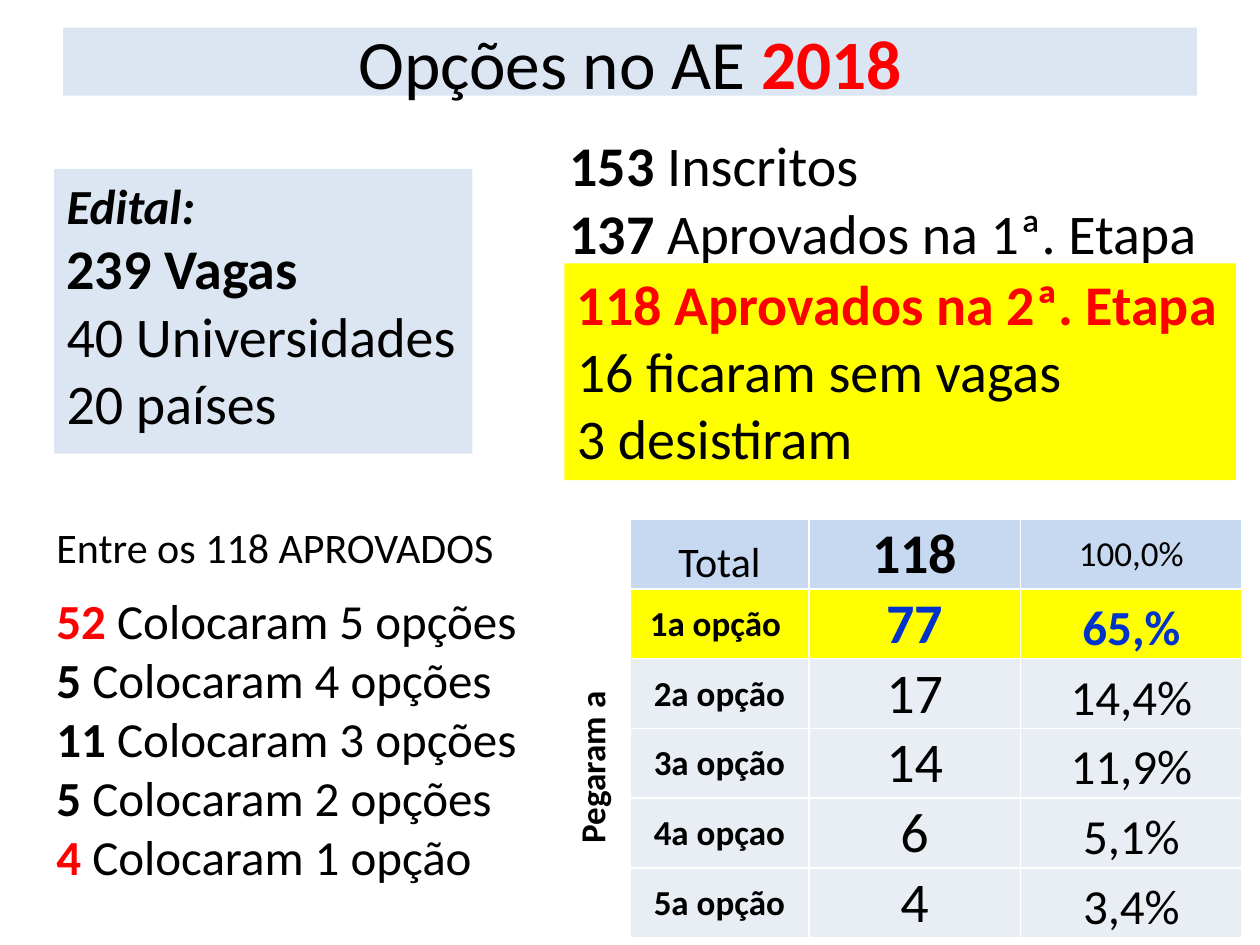
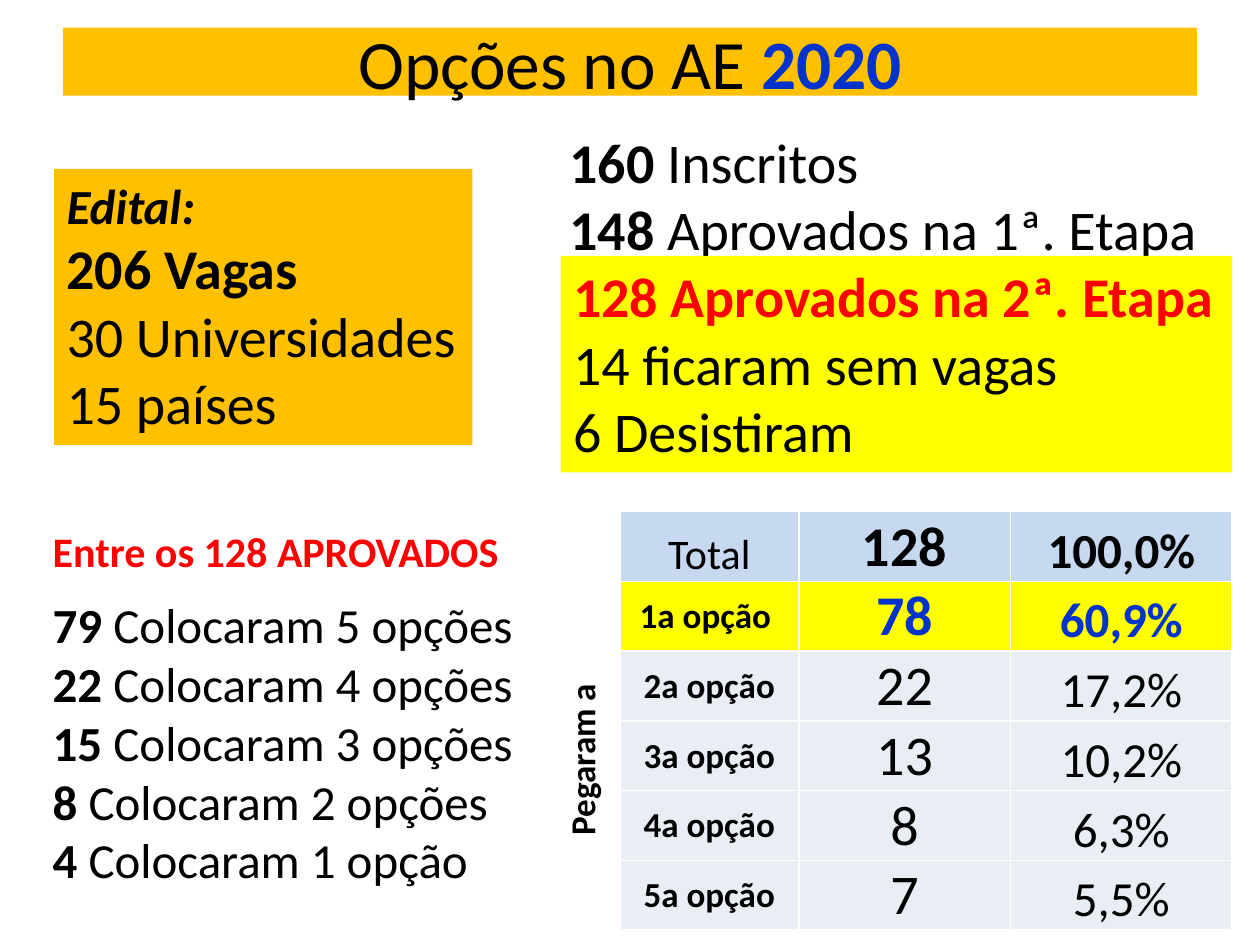
from dataclasses import dataclass

from lxml.etree import SubElement
from pptx import Presentation
from pptx.dml.color import RGBColor
from pptx.enum.text import MSO_ANCHOR, MSO_AUTO_SIZE, PP_ALIGN
from pptx.oxml.ns import qn
from pptx.util import Emu, Pt

FONT = "Calibri"
BLACK, WHITE, RED, BLUE = "000000", "FFFFFF", "FF0000", "0033CC"
YELLOW, PALE_BLUE, ORANGE = "FFFF00", "DCE6F2", "FFC000"
HEADER_BLUE, ROW_GREY = "C6D9F1", "E9EDF4"
COLUMN_WIDTHS = (47, 142, 168, 176)
ROW_HEIGHT = 54


@dataclass
class Span:
    text: str
    size: float = 32
    color: str = BLACK
    bold: bool = False
    italic: bool = False


def px(length):
    return Emu(length * 9144)


def rgb(color):
    return RGBColor.from_string(color)


def fill_with(target, color):
    if color:
        target.fill.solid()
        target.fill.fore_color.rgb = rgb(color)
    else:
        target.fill.background()


class Board:
    """Holds the deck style and the slide being built."""

    def __init__(self, deck):
        self.deck = deck
        self.page = None

    def add_lines(self, frame, lines, align=PP_ALIGN.LEFT):
        for index, spans in enumerate(lines):
            para = frame.paragraphs[0] if index == 0 else frame.add_paragraph()
            para.alignment = align
            for span in spans:
                run = para.add_run()
                run.text = span.text
                run.font.name = FONT
                run.font.size = Pt(span.size)
                run.font.bold = span.bold
                run.font.italic = span.italic
                run.font.color.rgb = rgb(span.color)

    def start_page(self, year, year_color, band_color):
        self.page = self.deck.slides.add_slide(self.deck.slide_layouts[5])
        title = self.page.shapes.title
        title.left, title.top, title.width, title.height = map(px, (50, 22, 900, 54))
        fill_with(title, band_color)
        frame = title.text_frame
        frame.auto_size = MSO_AUTO_SIZE.NONE
        frame.vertical_anchor = MSO_ANCHOR.MIDDLE
        spans = [Span("Opções no AE ", 39.6), Span(year, 39.6, year_color, True)]
        self.add_lines(frame, [spans], PP_ALIGN.CENTER)

    def text(self, place, lines, color=None):
        box = self.page.shapes.add_textbox(*map(px, place))
        fill_with(box, color)
        frame = box.text_frame
        frame.word_wrap = False
        frame.auto_size = MSO_AUTO_SIZE.NONE
        self.add_lines(frame, lines)

    def cell(self, cell, span=None, color=None, anchor=MSO_ANCHOR.BOTTOM):
        cell.margin_left = cell.margin_right = cell.margin_top = px(1)
        cell.margin_bottom = 0
        cell.vertical_anchor = anchor
        properties = cell._tc.get_or_add_tcPr()
        for side in ("lnL", "lnR", "lnT", "lnB"):
            line = SubElement(properties, qn(f"a:{side}"), w=str(Pt(1)))
            solid = SubElement(line, qn("a:solidFill"))
            SubElement(solid, qn("a:srgbClr"), val=WHITE)
        fill_with(cell, color)
        if span:
            self.add_lines(cell.text_frame, [[span]], PP_ALIGN.CENTER)

    def option_table(self, left, top, total, total_share, rows):
        row_count = len(rows) + 1
        table = self.page.shapes.add_table(
            row_count, len(COLUMN_WIDTHS), px(left), px(top),
            px(sum(COLUMN_WIDTHS)), px(ROW_HEIGHT * row_count)).table
        table.first_row = table.horz_banding = False
        for column, width in zip(table.columns, COLUMN_WIDTHS):
            column.width = px(width)
        for row in table.rows:
            row.height = px(ROW_HEIGHT)

        self.cell(table.cell(0, 0))
        self.cell(table.cell(0, 1), Span("Total", 24), HEADER_BLUE)
        self.cell(table.cell(0, 2), Span(total, bold=True), HEADER_BLUE)
        share_anchor = MSO_ANCHOR.BOTTOM if total_share.bold else MSO_ANCHOR.MIDDLE
        self.cell(table.cell(0, 3), total_share, HEADER_BLUE, share_anchor)

        side = table.cell(1, 0)
        side.merge(table.cell(row_count - 1, 0))
        self.cell(side, Span("Pegaram a ", 20, bold=True), anchor=MSO_ANCHOR.MIDDLE)
        side._tc.get_or_add_tcPr().set("vert", "vert270")

        for index, (label, count, share) in enumerate(rows, 1):
            first = index == 1
            color = YELLOW if first else ROW_GREY
            ink = BLUE if first else BLACK
            self.cell(table.cell(index, 1), Span(label, 20, bold=True), color, MSO_ANCHOR.MIDDLE)
            self.cell(table.cell(index, 2), Span(count, 32, ink, first), color)
            self.cell(table.cell(index, 3), Span(share, 28, ink, first), color)


def counted(number, label, size=32, color=BLACK):
    return [Span(number, size, color, True), Span(f" {label}", size)]


def stage_lines(applicants, passed):
    return [counted(applicants, "Inscritos"), counted(passed, "Aprovados na 1ª. Etapa")]


def result_lines(approved, unplaced, withdrawn):
    return [[Span(f"{approved} Aprovados na 2ª. Etapa", 32, RED, True)],
            [Span(unplaced)], [Span(withdrawn)]]


def notice_lines(places, universities, countries):
    return [[Span("Edital:", 28, bold=True, italic=True)],
            [Span(f"{places} Vagas", bold=True)],
            [Span(f"{universities} Universidades")], [Span(f"{countries} países")]]


def choice_lines(counts, red_rows=()):
    lines = []
    for index, count in enumerate(counts):
        options = len(counts) - index
        noun = "opção" if options == 1 else "opções"
        color = RED if index in red_rows else BLACK
        lines.append(counted(count, f"Colocaram {options} {noun}", 28, color))
    return lines


def main():
    deck = Presentation()
    deck.slide_width, deck.slide_height = px(1000), px(750)
    board = Board(deck)

    board.start_page("2018", RED, PALE_BLUE)
    board.text((442, 99, 523, 118), stage_lines("153", "137"))
    board.text((448, 209, 533, 172),
               result_lines("118", "16 ficaram sem vagas", "3 desistiram"), YELLOW)
    board.text((35, 464, 390, 246),
               choice_lines(("52", "5", "11", "5", "4"), red_rows=(0, 4)))
    board.text((35, 409, 370, 50), [[Span("Entre os 118 APROVADOS", 24)]])
    board.option_table(453, 412, "118", Span("100,0%", 20), [
        ("1a opção ", "77", "65,%"),
        ("2a opção", "17", "14,4%"),
        ("3a opção", "14", "11,9%"),
        ("4a opçao", "6", "5,1%"),
        ("5a opção", "4", "3,4%"),
    ])
    board.text((43, 134, 332, 226), notice_lines("239", "40", "20"), PALE_BLUE)

    board.start_page("2020", BLUE, ORANGE)
    board.text((442, 96, 523, 118), stage_lines("160", "148"))
    board.text((445, 203, 533, 172),
               result_lines("128", "14 ficaram sem vagas", "6 Desistiram"), YELLOW)
    board.text((32, 467, 390, 246), choice_lines(("79", "22", "15", "8", "4")))
    board.text((32, 412, 377, 50), [[Span("Entre os 128 APROVADOS", 24, RED, True)]])
    board.text((43, 134, 332, 219), notice_lines("206", "30", "15"), ORANGE)
    board.option_table(445, 406, "128", Span("100,0%", 28, bold=True), [
        ("1a opção ", "78", "60,9%"),
        ("2a opção", "22", "17,2%"),
        ("3a opção", "13", "10,2%"),
        ("4a opção", "8", "6,3%"),
        ("5a opção", "7", "5,5%"),
    ])

    deck.save("out.pptx")


if __name__ == "__main__":
    main()
